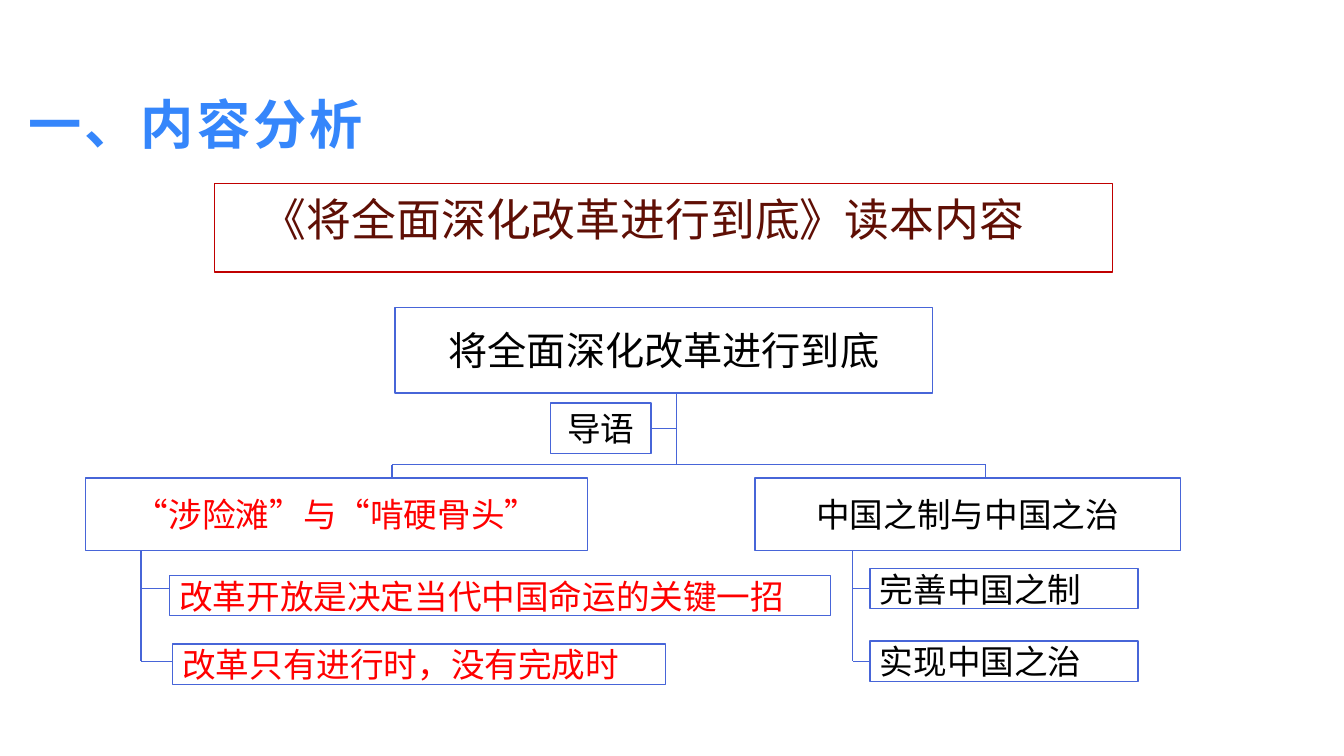
from lxml import etree
from pptx import Presentation
from pptx.dml.color import RGBColor
from pptx.enum.shapes import MSO_CONNECTOR, MSO_SHAPE
from pptx.enum.text import MSO_ANCHOR, MSO_AUTO_SIZE, PP_ALIGN
from pptx.oxml.ns import qn
from pptx.util import Inches, Pt

RECT = MSO_SHAPE.RECTANGLE
STRAIGHT = MSO_CONNECTOR.STRAIGHT
MIDDLE, BOTTOM, TOP = MSO_ANCHOR.MIDDLE, MSO_ANCHOR.BOTTOM, MSO_ANCHOR.TOP
LEFT, CENTER, JUSTIFY = PP_ALIGN.LEFT, PP_ALIGN.CENTER, PP_ALIGN.JUSTIFY
FIXED = MSO_AUTO_SIZE.NONE
COLS, ROWS = 40, 30
FACE = "Noto Sans CJK SC"
BLUE, RED, BLACK, WHITE = "4765D8", "FF0000", "000000", "FFFFFF"


def color(code):
    return RGBColor.from_string(code)


class Chart:
    """Draws the outline tree on one slide, in grid columns and rows."""

    def __init__(self, deck):
        self.wide, self.high = deck.slide_width / COLS, deck.slide_height / ROWS
        self.slide = deck.slides.add_slide(deck.slide_layouts[5])
        self.shapes = self.slide.shapes

    def place(self, x, y, w, h):
        return [round(n) for n in (x * self.wide, y * self.high, w * self.wide, h * self.high)]

    def words(self, shape, text, size, tint, align, anchor, bold=False, gap=0):
        frame = shape.text_frame
        frame.word_wrap, frame.auto_size = True, FIXED
        frame.vertical_anchor = anchor
        para = frame.paragraphs[0]
        para.text, para.alignment = text, align
        font = para.font
        font.name, font.size, font.bold = FACE, Pt(size), bold
        font.color.rgb = color(tint)
        props = para._p.pPr.find(qn("a:defRPr"))
        etree.SubElement(props, qn("a:ea")).set("typeface", FACE)
        if gap:
            props.set("spc", str(round(gap * 100)))

    def title(self, area, text):
        shape = self.shapes.title
        shape.left, shape.top, shape.width, shape.height = self.place(*area)
        frame = shape.text_frame
        frame.margin_left = frame.margin_right = Inches(0.07)
        frame.margin_top = frame.margin_bottom = Inches(0.03)
        self.words(shape, text, 38, "3586FB", LEFT, BOTTOM, True, 2.2)

    def label(self, area, text, size, tint):
        shape = self.shapes.add_textbox(*self.place(*area))
        self.words(shape, text, size, tint, JUSTIFY, TOP)

    def box(self, area, text="", size=24, tint=BLACK, align=CENTER, edge=BLUE, fill=WHITE):
        shape = self.shapes.add_shape(RECT, *self.place(*area))
        shape.shadow.inherit = False
        if fill:
            shape.fill.solid()
            shape.fill.fore_color.rgb = color(fill)
        else:
            shape.fill.background()
        shape.line.color.rgb, shape.line.width = color(edge), Pt(1)
        if text:
            self.words(shape, text, size, tint, align, MIDDLE)

    def line(self, x, y, x2, y2):
        link = self.shapes.add_connector(STRAIGHT, *self.place(x, y, x2, y2))
        link.line.color.rgb, link.line.width = color(BLUE), Pt(1)
        etree.SubElement(link._element.spPr, qn("a:effectLst"))

    def branch(self, x, w, text, tint, drop, stem, leaves):
        top, high, step, bar = 18.96, 2.88, 2.88, 18.44
        self.line(drop, bar, drop, top)
        self.box((x, top, w, high), text, tint=tint)
        self.line(stem, top + high, stem, 26.24)
        for i, (left, y, wide, text) in enumerate(leaves):
            twig = 23.36 + i * step
            self.line(stem, twig, left, twig)
            self.box((left, y, wide, 1.6), text, tint=tint, align=LEFT)


def main():
    deck = Presentation()
    deck.slide_width, deck.slide_height = Inches(13.33), Inches(7.5)
    tree = Chart(deck)
    tree.title((0.63, 3.2, 19.11, 3.08), "一、内容分析")
    tree.label((7.5, 7.4, 24.51, 2.56), "《将全面深化改革进行到底》读本内容", 32, "5F0F05")
    tree.box((6.39, 7.28, 26.73, 3.52), edge="C00000", fill=None)

    trunk, bar, ends = 20.13, 18.44, (11.67, 29.34)
    tree.box((11.76, 12.2, 16, 3.4), "将全面深化改革进行到底", 28)
    tree.line(trunk, 15.6, trunk, bar)
    tree.line(ends[0], bar, ends[1], bar)
    tree.box((16.38, 16, 3, 2), "导语")
    tree.line(19.38, 17, trunk, 17)

    tree.branch(2.55, 14.94, "“涉险滩”与“啃硬骨头”", RED, ends[0], 4.2, [
        (5.04, 22.84, 19.68, "改革开放是决定当代中国命运的关键一招"),
        (5.13, 25.56, 14.67, "改革只有进行时，没有完成时"),
    ])
    tree.branch(22.47, 12.66, "中国之制与中国之治", BLACK, ends[1], 25.38, [
        (25.89, 22.56, 7.98, "完善中国之制"),
        (25.89, 25.44, 7.98, "实现中国之治"),
    ])
    deck.save("out.pptx")


if __name__ == "__main__":
    main()
